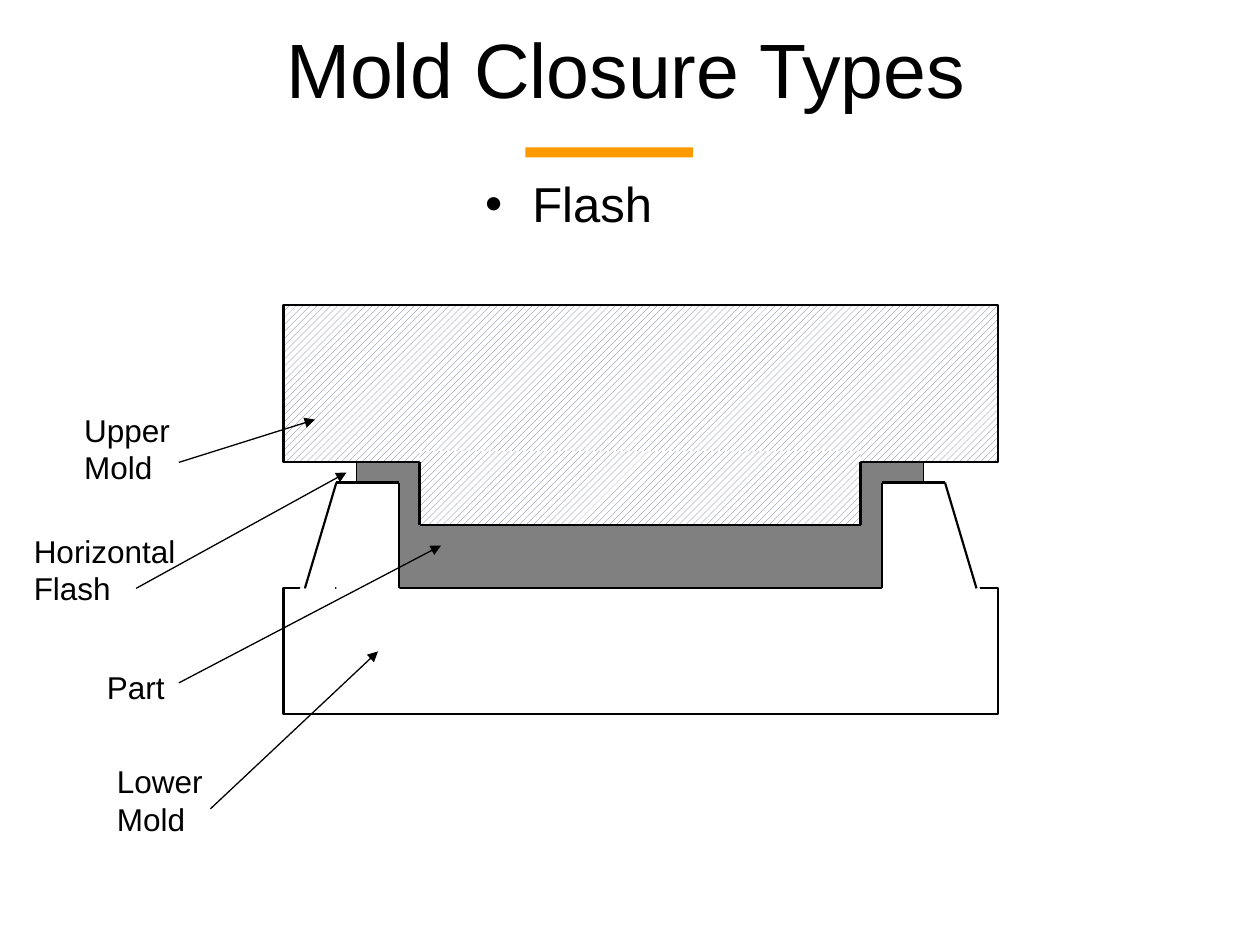
from lxml.etree import SubElement
from pptx import Presentation
from pptx.dml.color import RGBColor
from pptx.enum.dml import MSO_PATTERN
from pptx.enum.shapes import MSO_CONNECTOR, MSO_SHAPE
from pptx.enum.text import MSO_ANCHOR, MSO_AUTO_SIZE, PP_ALIGN
from pptx.oxml.ns import qn
from pptx.util import Inches, Pt

COLORS = {"ink": "000000", "paper": "FFFFFF", "part": "808080", "hatch": "666699", "accent": "FF9900"}
RGB = {name: RGBColor.from_string(value) for name, value in COLORS.items()}
MIRROR_SUM = 10.17

deck = Presentation()
deck.slide_width, deck.slide_height = Inches(10), Inches(7.5)
page = deck.slides.add_slide(deck.slide_layouts[1])


def add_block(kind, place, fill, outline=None):
    block = page.shapes.add_shape(kind, *[Inches(value) for value in place])
    block.shadow.inherit = False
    if fill == "hatch":
        block.fill.patterned()
        block.fill.pattern = MSO_PATTERN.WIDE_UPWARD_DIAGONAL
        block.fill.fore_color.rgb = RGB["hatch"]
        block.fill.back_color.rgb = RGB["paper"]
    else:
        block.fill.solid()
        block.fill.fore_color.rgb = RGB[fill]
    if outline:
        block.line.color.rgb = RGB["ink"]
        block.line.width = Pt(outline)
    else:
        block.line.fill.background()
    return block


def add_line(start, end, width=1.25, arrow=False):
    line = page.shapes.add_connector(
        MSO_CONNECTOR.STRAIGHT, *[Inches(value) for value in (*start, *end)])
    line.line.color.rgb = RGB["ink"]
    line.line.width = Pt(width)
    if arrow:
        SubElement(line.line._get_or_add_ln(), qn("a:tailEnd"), type="triangle")
    SubElement(line._element.spPr, qn("a:effectLst"))


headings = [
    (page.shapes.title, "Mold Closure Types", (2.17, 0, 7.25, 1.08), 44, MSO_ANCHOR.MIDDLE),
    (page.placeholders[1], "Flash", (3.75, 1.33, 1.75, 0.67), 28, MSO_ANCHOR.TOP),
]
for box, text, place, size, anchor in headings:
    box.left, box.top, box.width, box.height = [Inches(value) for value in place]
    frame = box.text_frame
    frame.text = text
    frame.word_wrap = True
    frame.auto_size = MSO_AUTO_SIZE.NONE
    frame.vertical_anchor = anchor
    para = frame.paragraphs[0]
    para.alignment = PP_ALIGN.LEFT
    para.space_before = Pt(0)
    if box is page.placeholders[1]:
        properties = para._p.get_or_add_pPr()
        properties.set("marL", str(Inches(0.81)))
        properties.set("indent", str(Inches(-0.31)))
        SubElement(properties, qn("a:buNone"))
    for name, value in {"name": "Arial", "size": Pt(size)}.items():
        setattr(para.font, name, value)
    para.font.color.rgb = RGB["ink"]

add_block(MSO_SHAPE.RECTANGLE, (2.83, 3.58, 4.5, 1.25), "part", 0.75)
add_block(MSO_SHAPE.RECTANGLE, (2.25, 2.42, 5.67, 1.25), "hatch", 1.25)
add_block(MSO_SHAPE.RECTANGLE, (3.33, 3.58, 3.5, 0.58), "hatch")
for x in (3.33, 6.83):
    add_line((x, 3.67), (x, 4.17))
add_line((3.33, 4.17), (6.83, 4.17))

add_block(MSO_SHAPE.RECTANGLE, (2.25, 4.67, 5.67, 1), "paper", 1.25)
for wall_left, slope_left in ((7, 7.5), (2.67, 2.33)):
    add_block(MSO_SHAPE.RECTANGLE, (wall_left, 3.83, 0.5, 1.17), "paper")
    slope = add_block(MSO_SHAPE.RIGHT_TRIANGLE, (slope_left, 3.83, 0.33, 1), "paper")
    if slope_left < wall_left:
        slope._element.spPr.xfrm.set("flipH", "1")

wall_profile = [(3.17, 4.67), (3.17, 3.83), (2.67, 3.83), (2.42, 4.67)]
mirrored_profile = [(MIRROR_SUM - x, y) for x, y in wall_profile]
for profile in (wall_profile, mirrored_profile):
    for start, end in zip(profile, profile[1:]):
        add_line(start, end)

labels = [
    (["Part"], (0.75, 5.25, 0.66, 0.4), (1.42, 5.42), (3.5, 4.33)),
    (["Upper", "Mold"], (0.57, 3.21, 0.95, 0.7), (1.42, 3.67), (2.5, 3.33)),
    (["Lower", "Mold"], (0.83, 6, 0.88, 0.7), (1.67, 6.42), (3, 5.17)),
    (["Horizontal", "Flash"], (0.17, 4.17, 1.33, 0.7), (1.08, 4.67), (2.75, 3.75)),
]
for words, place, start, end in labels:
    box = page.shapes.add_textbox(*[Inches(value) for value in place])
    frame = box.text_frame
    frame.text = "\n".join(words)
    frame.word_wrap = False
    frame.auto_size = MSO_AUTO_SIZE.SHAPE_TO_FIT_TEXT
    for para in frame.paragraphs:
        for name, value in {"name": "Arial", "size": Pt(18)}.items():
            setattr(para.font, name, value)
        para.font.color.rgb = RGB["ink"]
    add_line(start, end, 0.75, arrow=True)

add_block(MSO_SHAPE.RECTANGLE, (4.17, 1.17, 1.33, 0.08), "accent")

deck.save("out.pptx")
